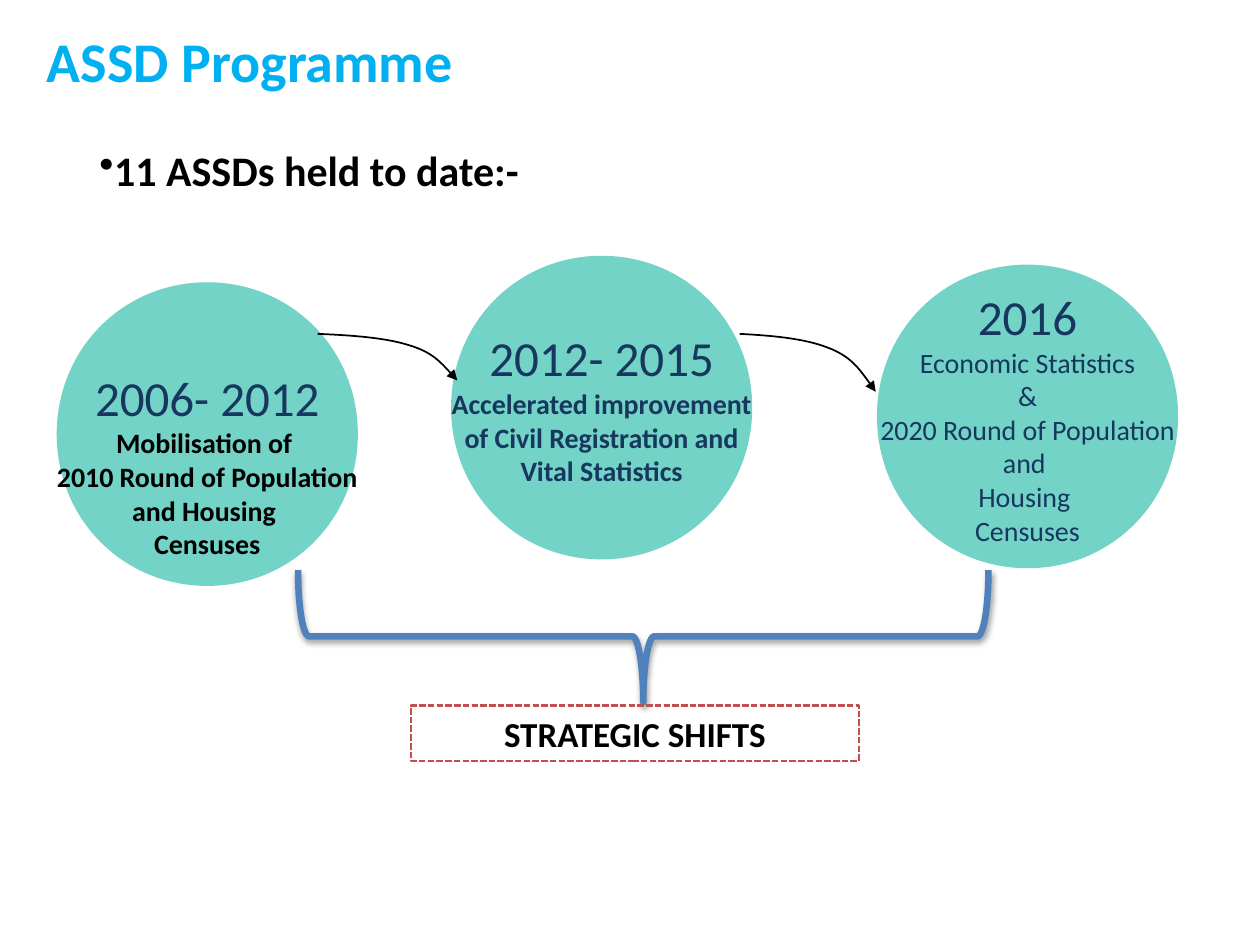
from lxml import etree
from pptx import Presentation
from pptx.dml.color import RGBColor
from pptx.enum import dml, shapes, text
from pptx.oxml import parse_xml
from pptx.oxml.ns import nsdecls, qn
from pptx.util import Inches, Pt

COLORS = {"title": "00B0F0", "ink": "000000", "navy": "17375E",
          "circle": "72D3C6", "brace": "4F81BD", "frame": "C0504D"}

TITLE = {"size": Pt(32), "bold": True, "color": "title"}
POINT = {"size": Pt(24), "bold": True, "color": "ink"}
SHIFTS = {"size": Pt(20), "bold": True, "color": "ink"}
YEARS = {"size": Pt(28), "bold": False, "color": "navy"}
THEME_INK = {"size": Pt(16), "bold": True, "color": "ink"}
THEME_BOLD = {"size": Pt(16), "bold": True, "color": "navy"}
THEME = {"size": Pt(16), "bold": False, "color": "navy"}

# Each phase: box, top inset, paragraphs made of (text, format) spans
CIRCLE_SIZE = (2.39, 2.41)
PHASES = [
    ((0.45, 2.24, *CIRCLE_SIZE), 0.47, [
        [("2006- 2012 ", YEARS), ("Mobilisation of ", THEME_INK)],
        [("2010 Round of Population and Housing ", THEME_INK)],
        [("Censuses", THEME_INK)]]),
    ((3.58, 2.03, *CIRCLE_SIZE), 0, [
        [("2012- 2015", YEARS)],
        [("Accelerated improvement of Civil Registration and Vital Statistics",
          THEME_BOLD)]]),
    ((6.96, 2.1, *CIRCLE_SIZE), 0, [
        [("2016", YEARS)],
        *([(line, THEME)] for line in (
            "Economic Statistics", "&", "2020 Round of Population and ",
            "Housing ", "Censuses"))]),
]
ARROWS = [(2.52, 2.65, 1.11, 0.37), (5.87, 2.65, 1.08, 0.46)]

# Bezier points as fractions of the box: start, then three per segment
NEAR, FAR = 0.22, 0.78
CIRCLE = [(0.5, 0), (FAR, 0), (1, NEAR), (1, 0.5), (1, FAR), (FAR, 1), (0.5, 1),
          (NEAR, 1), (0, FAR), (0, 0.5), (0, NEAR), (NEAR, 0), (0.5, 0)]
SWOOP = [(0, 0), (0.24, 0.03), (0.48, 0.08), (0.65, 0.24),
         (0.82, 0.39), (0.91, 0.7), (1, 1)]


def color(name):
    return RGBColor.from_string(COLORS[name])


def place(box):
    return [Inches(length) for length in box]


def add_span(para, words, style):
    span = para.add_run()
    span.text = words
    span.font.name = "Calibri"
    for key, value in style.items():
        if key == "color":
            span.font.color.rgb = color(value)
        else:
            setattr(span.font, key, value)


def add_curve(page, box, points, close=False):
    """Draw a smooth outline through Bezier points given as box fractions."""
    left, top, width, height = place(box)
    spots = [(round(left + x * width), round(top + y * height)) for x, y in points]
    builder = page.shapes.build_freeform(*spots[0])
    builder.add_line_segments(spots[1:], close=close)
    curve = builder.convert_to_shape()
    curve.shadow.inherit = False
    lines = list(curve._element.iter(qn("a:lnTo")))
    for start in range(0, len(lines), 3):
        bend = etree.Element(qn("a:cubicBezTo"))
        lines[start].addprevious(bend)
        for line in lines[start:start + 3]:
            bend.append(line[0])
            line.getparent().remove(line)
    return curve


def add_title(page, box):
    title = page.shapes.title
    title.left, title.top, title.width, title.height = place(box)
    title.text_frame.vertical_anchor = text.MSO_ANCHOR.MIDDLE
    para = title.text_frame.paragraphs[0]
    para.alignment = text.PP_ALIGN.LEFT
    add_span(para, "ASSD Programme", TITLE)


def add_point(page, box):
    frame = page.shapes.add_textbox(*place(box)).text_frame
    frame.word_wrap = True
    para = frame.paragraphs[0]
    para._p.get_or_add_pPr().append(
        parse_xml(f'<a:buChar {nsdecls("a")} char="•"/>'))
    add_span(para, "11 ASSDs held to date:-", POINT)


def add_phase(page, box, inset, lines):
    circle = add_curve(page, box, CIRCLE, close=True)
    circle.fill.solid()
    circle.fill.fore_color.rgb = color("circle")
    circle.line.fill.background()
    frame = circle.text_frame
    settings = {"word_wrap": True, "vertical_anchor": text.MSO_ANCHOR.MIDDLE,
                "margin_left": 0, "margin_right": 0, "margin_bottom": 0,
                "margin_top": Inches(inset)}
    for key, value in settings.items():
        setattr(frame, key, value)
    for index, spans in enumerate(lines):
        para = frame.add_paragraph() if index else frame.paragraphs[0]
        para.alignment = text.PP_ALIGN.CENTER
        for words, style in spans:
            add_span(para, words, style)


def add_arrow(page, box):
    arrow = add_curve(page, box, SWOOP)
    arrow.fill.background()
    arrow.line.color.rgb = color("ink")
    arrow.line.width = Pt(1)
    arrow.line._get_or_add_ln().append(
        parse_xml(f'<a:tailEnd {nsdecls("a")} type="triangle"/>'))


def add_brace(page, box):
    """Add a downward brace; the box is the one before the quarter turn."""
    brace = page.shapes.add_shape(shapes.MSO_SHAPE.RIGHT_BRACE, *place(box))
    brace.rotation = 90
    brace.fill.background()
    brace.line.color.rgb = color("brace")
    brace.line.width = Pt(3.75)
    brace._element.spPr.append(parse_xml(
        f'<a:effectLst {nsdecls("a")}><a:outerShdw blurRad="40000" dist="20000"'
        f' dir="5400000" rotWithShape="0"><a:srgbClr val="{COLORS["ink"]}">'
        '<a:alpha val="38000"/></a:srgbClr></a:outerShdw></a:effectLst>'))


def add_shifts(page, box):
    label = page.shapes.add_shape(shapes.MSO_SHAPE.RECTANGLE, *place(box))
    label.shadow.inherit = False
    label.fill.background()
    label.line.color.rgb = color("frame")
    label.line.width = Pt(1.25)
    label.line.dash_style = dml.MSO_LINE.SQUARE_DOT
    para = label.text_frame.paragraphs[0]
    para.alignment = text.PP_ALIGN.CENTER
    add_span(para, "STRATEGIC SHIFTS", SHIFTS)


def main():
    deck = Presentation()
    deck.slide_width, deck.slide_height = Inches(10), Inches(7.5)
    page = deck.slides.add_slide(deck.slide_layouts[5])
    # Heading and statement
    add_title(page, (0.27, 0.16, 5, 0.64))
    add_point(page, (0.69, 1.1, 8.36, 0.5))
    # Phases, the brace below them and the arrows between them
    for box, inset, lines in PHASES:
        add_phase(page, box, inset, lines)
    add_brace(page, (4.58, 2.31, 1.05, 5.48))
    for box in ARROWS:
        add_arrow(page, box)
    # Conclusion
    add_shifts(page, (3.26, 5.6, 3.56, 0.44))
    deck.save("out.pptx")


if __name__ == "__main__":
    main()
